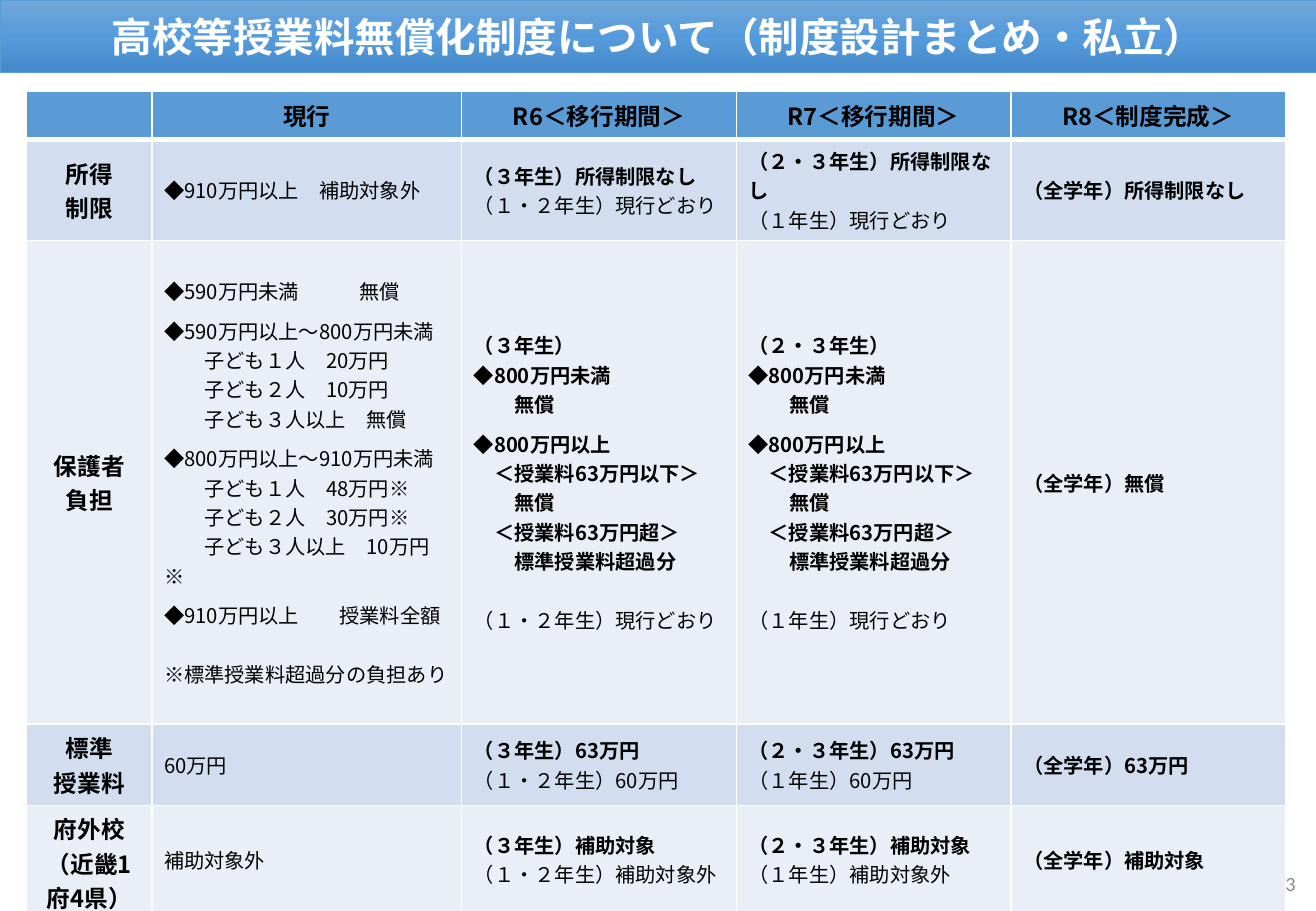
from copy import deepcopy
from dataclasses import dataclass

from lxml import etree
from pptx import Presentation
from pptx.dml.color import RGBColor
from pptx.enum import text
from pptx.oxml import ns
from pptx.util import Inches, Pt

COLORS = {
    "white": "FFFFFF", "black": "000000", "grey": "8C8C8C", "blue": "5B9BD5",
    "band_dark": "D2DEEF", "band_light": "EAEFF7",
    "top": "71A6DB", "middle": "559BDB", "bottom": "448ACA",
}
FONT = "Noto Sans CJK JP"
BODY_SIZE = 12
LABEL_SIZE = 14
COLUMN_WIDTHS = [1.03, 2.55, 2.26, 2.26, 2.26]
ROW_HEIGHTS = [0.37, 0.83, 3.98, 0.67, 0.89]
HEADERS = ["", "現行", "R6＜移行期間＞", "R7＜移行期間＞", "R8＜制度完成＞"]
LABELS = [["所得", "制限"], ["保護者", "負担"], ["標準", "授業料"], ["府外校", "（近畿1府4県）"]]


@dataclass
class Line:
    """One paragraph of a table cell; indent is in characters, gaps in points."""
    words: str
    bold: bool = False
    indent: int = 0
    before: float = 0
    after: float = 0
    stretch: int = 0
    size: int = BODY_SIZE
    align: text.PP_ALIGN = text.PP_ALIGN.LEFT


def rgb(name):
    """Return the named colour."""
    return RGBColor.from_string(COLORS[name])


def add_span(para, words, size, color, bold=False, font=FONT):
    """Add one formatted run to a paragraph and return it."""
    span = para.add_run()
    span.text = words
    span.font.size, span.font.bold, span.font.name = Pt(size), bold, font
    span.font.color.rgb = rgb(color)
    east_asian = etree.SubElement(span.font._element, ns.qn("a:ea"))
    east_asian.set("typeface", font)
    return span


def add_line(para, line):
    """Write a Line into a paragraph, widening its space by the stretch."""
    para.alignment = line.align
    para.space_before, para.space_after = Pt(line.before), Pt(line.after)
    para._p.get_or_add_pPr().set("indent", str(Pt(line.indent * BODY_SIZE)))
    parts = line.words.partition("　") if line.stretch else [line.words]
    for part in parts:
        span = add_span(para, part, line.size, "black", line.bold)
        if line.stretch and part == "　":
            span.font._element.set("spc", str(line.stretch * 100))


def label(words):
    """Return a centred heading line."""
    return Line(words, bold=True, size=LABEL_SIZE, align=text.PP_ALIGN.CENTER)


def children_lines(amounts):
    """Return the burden for one, two and three or more children."""
    counts = ["１人", "２人", "３人以上"]
    lines = [Line(f"子ども{count}　{amount}", indent=2) for count, amount in zip(counts, amounts)]
    lines[-1].after = 6
    return lines


def current_column():
    """Return the cells of the current system."""
    burden = [
        Line("◆590万円未満　無償", after=6, stretch=2 * BODY_SIZE),
        Line("◆590万円以上～800万円未満"),
        *children_lines(["20万円", "10万円", "無償"]),
        Line("◆800万円以上～910万円未満"),
        *children_lines(["48万円※", "30万円※", "10万円※"]),
        Line("◆910万円以上　授業料全額", stretch=BODY_SIZE),
        Line("※標準授業料超過分の負担あり", before=17.4),
    ]
    return [[Line("◆910万円以上　補助対象外")], burden, [Line("60万円")], [Line("補助対象外")]]


def transition_column(new, old):
    """Return the cells of a transition year for the new and old grades."""
    def pair(new_words, old_words):
        return [Line(f"（{new}年生）{new_words}", bold=True), Line(f"（{old}年生）{old_words}")]

    burden = [
        Line(f"（{new}年生）", bold=True),
        Line("◆800万円未満", bold=True),
        Line("無償", bold=True, indent=2, after=6),
        Line("◆800万円以上", bold=True),
        Line("＜授業料63万円以下＞", bold=True, indent=1),
        Line("無償", bold=True, indent=2),
        Line("＜授業料63万円超＞", bold=True, indent=1),
        Line("標準授業料超過分", bold=True, indent=2),
        Line(f"（{old}年生）現行どおり", before=17.4),
    ]
    return [pair("所得制限なし", "現行どおり"), burden,
            pair("63万円", "60万円"), pair("補助対象", "補助対象外")]


def final_column():
    """Return the cells of the completed system."""
    results = ["所得制限なし", "無償", "63万円", "補助対象"]
    return [[Line(f"（全学年）{result}", bold=True)] for result in results]


def set_borders(cell, bottom):
    """Draw white borders around a cell."""
    properties = cell._tc.get_or_add_tcPr()
    for position, (side, width) in enumerate([("L", 1), ("R", 1), ("T", 1), ("B", bottom)]):
        border = etree.Element(ns.qn(f"a:ln{side}"), w=str(Pt(width)))
        fill = etree.SubElement(border, ns.qn("a:solidFill"))
        etree.SubElement(fill, ns.qn("a:srgbClr"), val=COLORS["white"])
        properties.insert(position, border)


def fill_cell(cell, lines, color, bottom=1):
    """Fill a cell with its lines, colour and borders."""
    cell.vertical_anchor = text.MSO_ANCHOR.MIDDLE
    cell.fill.solid()
    cell.fill.fore_color.rgb = rgb(color)
    set_borders(cell, bottom)
    frame = cell.text_frame
    for index, line in enumerate(lines):
        add_line(frame.add_paragraph() if index else frame.paragraphs[0], line)


def add_title(page, left, top, width, height):
    """Format the title as a gradient banner."""
    title = page.shapes.title
    title.left, title.top, title.width, title.height = map(Inches, (left, top, width, height))
    title.fill.gradient()
    title.fill.gradient_angle = 270
    stops = title._element.find(".//" + ns.qn("a:gsLst"))
    stops.append(deepcopy(stops[-1]))
    for index, color in enumerate(["top", "middle", "bottom"]):
        stop = title.fill.gradient_stops[index]
        stop.position = index / 2
        stop.color.rgb = rgb(color)
    title.line.color.rgb = rgb("blue")
    title.line.width = Pt(0.5)
    frame = title.text_frame
    frame.auto_size = text.MSO_AUTO_SIZE.NONE
    frame.vertical_anchor = text.MSO_ANCHOR.MIDDLE
    para = frame.paragraphs[0]
    para.alignment = text.PP_ALIGN.CENTER
    add_span(para, "高校等授業料無償化制度について（制度設計まとめ・私立）", 24, "white", True)


def add_page_number(page, left, top, width, height):
    """Add the page number at the right of its box."""
    box = page.shapes.add_textbox(*map(Inches, (left, top, width, height)))
    frame = box.text_frame
    frame.word_wrap = True
    frame.vertical_anchor = text.MSO_ANCHOR.MIDDLE
    para = frame.paragraphs[0]
    para.alignment = text.PP_ALIGN.RIGHT
    add_span(para, "13", 12, "grey", font="Calibri")


def add_system_table(page, left, top):
    """Add the table comparing the system year by year."""
    table = page.shapes.add_table(
        len(ROW_HEIGHTS), len(COLUMN_WIDTHS), Inches(left), Inches(top),
        Inches(sum(COLUMN_WIDTHS)), Inches(sum(ROW_HEIGHTS))).table
    for column, width in zip(table.columns, COLUMN_WIDTHS):
        column.width = Inches(width)
    for row, height in zip(table.rows, ROW_HEIGHTS):
        row.height = Inches(height)
    for column, header in enumerate(HEADERS):
        fill_cell(table.cell(0, column), [label(header)] if header else [], "blue", bottom=3)
    columns = [
        [[label(words) for words in group] for group in LABELS],
        current_column(),
        transition_column("３", "１・２"),
        transition_column("２・３", "１"),
        final_column(),
    ]
    for column, cells in enumerate(columns):
        for row, lines in enumerate(cells, 1):
            fill_cell(table.cell(row, column), lines, "band_dark" if row % 2 else "band_light")


def main():
    """Build and save the deck."""
    deck = Presentation()
    deck.slide_width, deck.slide_height = Inches(10.83), Inches(7.5)
    page = deck.slides.add_slide(deck.slide_layouts[5])
    add_title(page, 0, 0, 10.83, 0.6)
    add_page_number(page, 8.32, 7.07, 2.44, 0.4)
    add_system_table(page, 0.22, 0.75)
    deck.save("out.pptx")


if __name__ == "__main__":
    main()
